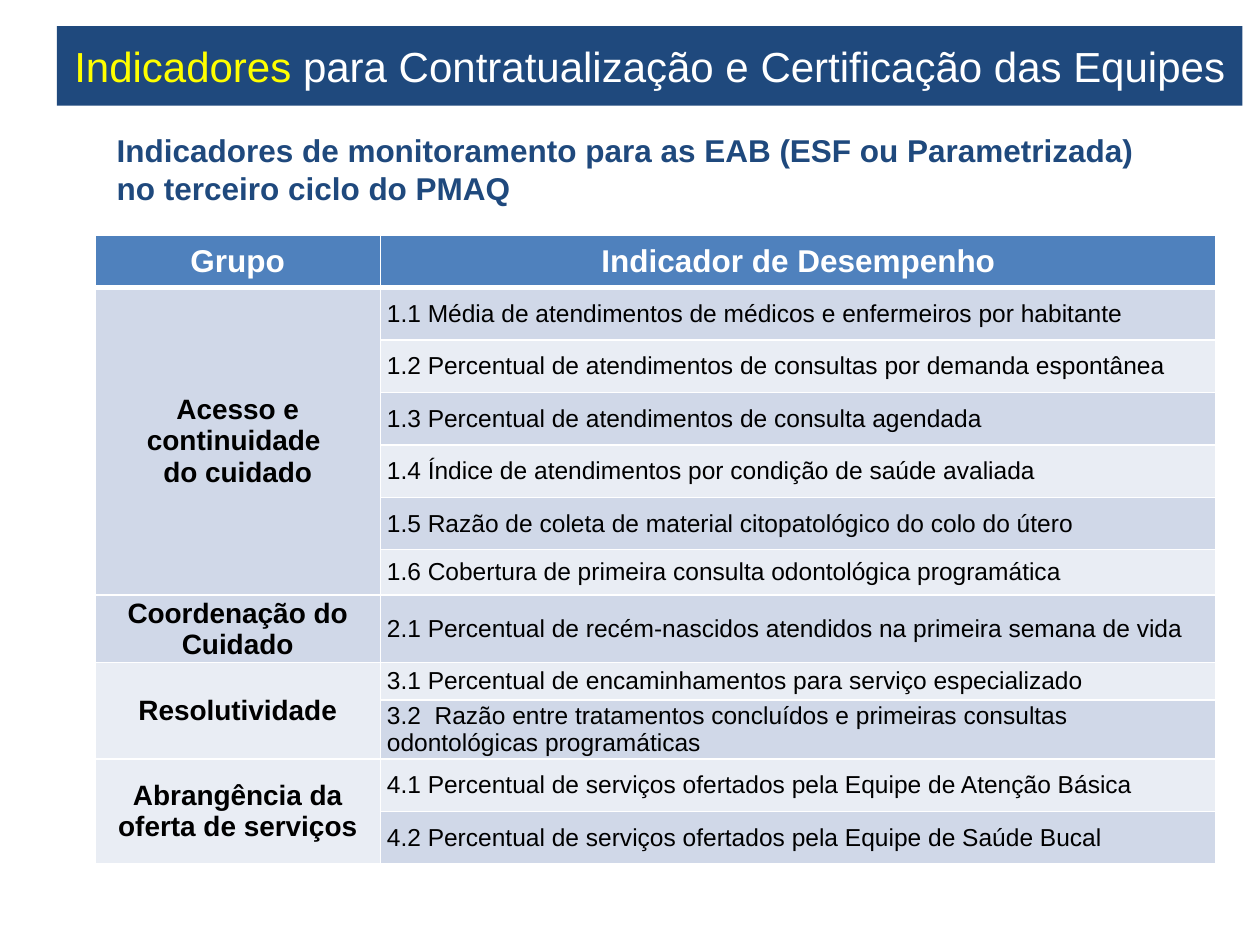
from lxml.etree import SubElement as Sub
from pptx import Presentation
from pptx.dml.color import RGBColor as RGB
from pptx.enum.shapes import MSO_SHAPE as Shape
from pptx.enum.text import MSO_ANCHOR as Anchor, PP_ALIGN as Align
from pptx.oxml.ns import qn
from pptx.util import Pt

# Content
TITLE = [("Indicadores", "yellow"),
         (" para Contratualização e Certificação das Equipes ", "white")]
LEAD = ("Indicadores de monitoramento para as EAB (ESF ou Parametrizada) "
        "no terceiro ciclo do PMAQ")
HEADS = ["Grupo", "Indicador de Desempenho"]
# Each group: name lines, fill, then (indicator, row height)
GROUPS = [
    (["Acesso e continuidade ", "do cuidado"], "dark", [
        ("1.1 Média de atendimentos de médicos e enfermeiros por habitante", 30),
        ("1.2 Percentual de atendimentos de consultas por demanda espontânea", 30),
        ("1.3 Percentual de atendimentos de consulta agendada", 30),
        ("1.4 Índice de atendimentos por condição de saúde avaliada", 30),
        ("1.5 Razão de coleta de material citopatológico do colo do útero", 30),
        ("1.6 Cobertura de primeira consulta odontológica programática", 26)]),
    (["Coordenação do Cuidado"], "dark", [
        ("2.1 Percentual de recém-nascidos atendidos na primeira semana de vida", 38.5)]),
    (["Resolutividade"], "light", [
        ("3.1 Percentual de encaminhamentos para serviço especializado", 21.4),
        ("3.2  Razão entre tratamentos concluídos e primeiras consultas "
         "odontológicas programáticas", 33.7)]),
    (["Abrangência da oferta de serviços"], "light", [
        ("4.1 Percentual de serviços ofertados pela Equipe de Atenção Básica", 30),
        ("4.2 Percentual de serviços ofertados pela Equipe de Saúde Bucal", 30)]),
]
COLS = [163.3, 477.5]
HEAD_H = 30
INK = {"navy": "1F497D", "yellow": "FFFF00", "white": "FFFFFF", "black": "000000",
       "blue": "4F81BD", "dark": "D0D8E8", "light": "E9EDF4"}


def color(name):
    return RGB.from_string(INK[name])


def add_run(para, text, size, ink, bold=False):
    run = para.add_run()
    run.text = text
    font = run.font
    font.name, font.size, font.bold = "Arial", Pt(size), bold
    font.color.rgb = color(ink)


def set_edges(cell, base):
    props = cell._tc.get_or_add_tcPr()
    for spot, (side, width) in enumerate(
            [("lnL", 1), ("lnR", 1), ("lnT", 1), ("lnB", base)]):
        line = Sub(props, qn("a:" + side), w=str(Pt(width)))
        fill = Sub(line, qn("a:solidFill"))
        Sub(fill, qn("a:srgbClr"), val=INK["white"])
        props.insert(spot, line)


def fill_cell(cell, lines, size, ink, fill, bold=True, align=Align.CENTER):
    cell.fill.solid()
    cell.fill.fore_color.rgb = color(fill)
    cell.vertical_anchor = Anchor.MIDDLE
    cell.margin_left = cell.margin_right = Pt(3.6)
    cell.margin_top = cell.margin_bottom = 0
    frame = cell.text_frame
    for i, text in enumerate(lines):
        para = frame.add_paragraph() if i else frame.paragraphs[0]
        para.alignment = align
        add_run(para, text, size, ink, bold)


deck = Presentation()
deck.slide_width, deck.slide_height = Pt(720), Pt(540)
slide = deck.slides.add_slide(deck.slide_layouts[6])

# Title band
band = slide.shapes.add_shape(Shape.RECTANGLE, Pt(32.5), Pt(15), Pt(677.5), Pt(45.4))
band.shadow.inherit = False
band.fill.solid()
band.fill.fore_color.rgb = color("navy")
band.line.fill.background()
band.text_frame.word_wrap = True
band.text_frame.vertical_anchor = Anchor.MIDDLE
para = band.text_frame.paragraphs[0]
para.alignment = Align.CENTER
for text, ink in TITLE:
    add_run(para, text, 24, ink)

# Lead text
lead = slide.shapes.add_textbox(Pt(59.6), Pt(71.3), Pt(612.7), Pt(51))
lead.text_frame.word_wrap = True
add_run(lead.text_frame.paragraphs[0], LEAD, 18, "navy", True)

# Table
heights = [HEAD_H] + [high for _, _, items in GROUPS for _, high in items]
table = slide.shapes.add_table(len(heights), len(COLS), Pt(54.2), Pt(134.2),
                               Pt(sum(COLS)), Pt(sum(heights))).table
for col, wide in zip(table.columns, COLS):
    col.width = Pt(wide)
for row, high in zip(table.rows, heights):
    row.height = Pt(high)

for i, text in enumerate(HEADS):
    fill_cell(table.cell(0, i), [text], 18, "white", "blue")

at = 1
for name, fill, items in GROUPS:
    group = table.cell(at, 0)
    if len(items) > 1:
        group.merge(table.cell(at + len(items) - 1, 0))
    fill_cell(group, name, 16, "black", fill)
    for text, _ in items:
        fill_cell(table.cell(at, 1), [text], 14, "black",
                  "dark" if at % 2 else "light", False, Align.LEFT)
        at += 1

for i, row in enumerate(table.rows):
    for cell in row.cells:
        set_edges(cell, 1 if i else 3)

deck.save("out.pptx")
